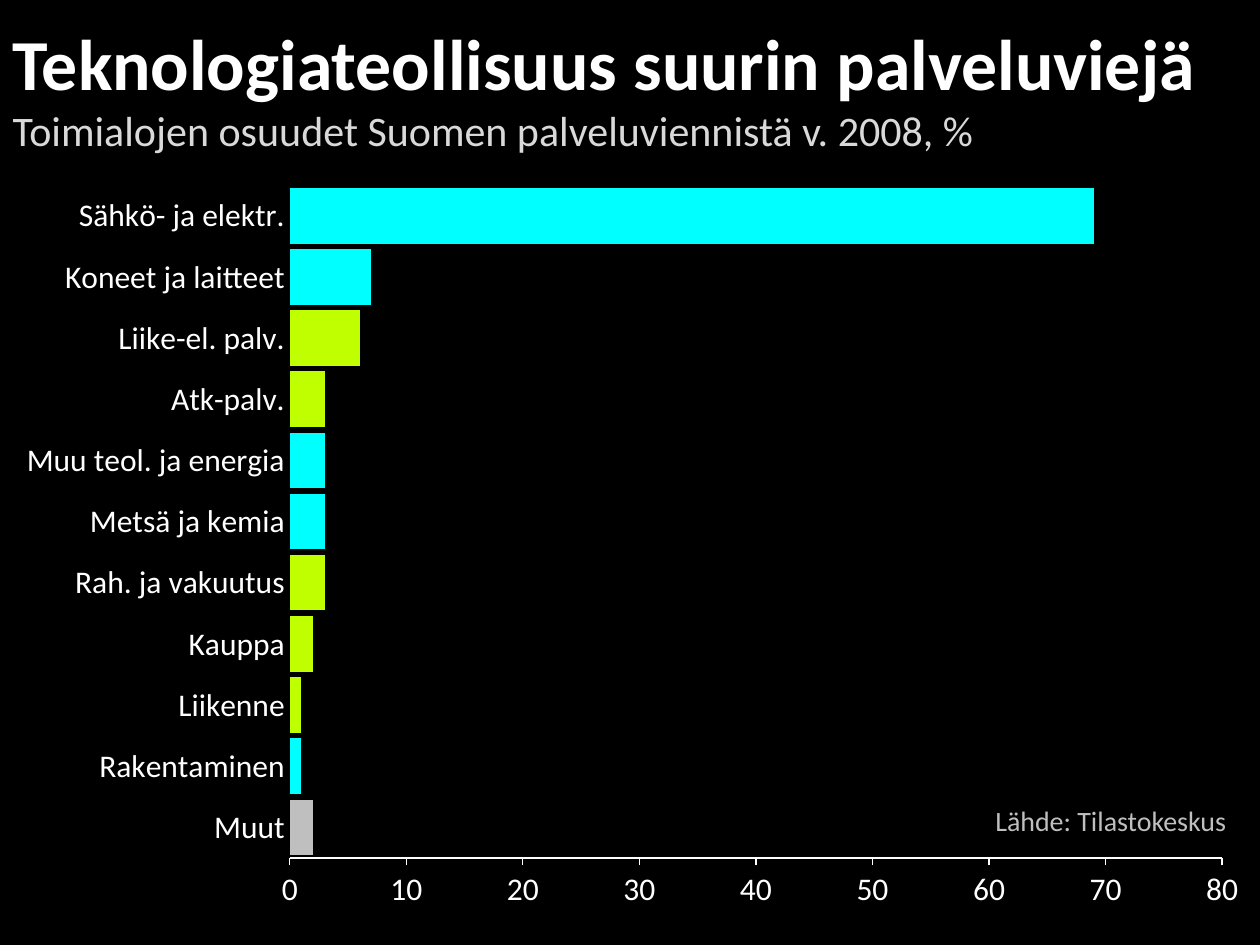
import pptx
import pptx.chart.data
import pptx.dml.color
import pptx.enum.chart
import pptx.enum.text
import pptx.oxml
import pptx.oxml.ns
import pptx.util

COLOURS = {
    "ground": "000000", "text": "FFFFFF", "subtitle": "D9D9D9",
    "industry": "00FFFF", "services": "C0FF00", "other": "BFBFBF",
}
EXPORT_SHARES = [
    ("Muut", 2, "other"),
    ("Rakentaminen", 1, "industry"),
    ("Liikenne", 1, "services"),
    ("Kauppa", 2, "services"),
    ("Rah. ja vakuutus", 3, "services"),
    ("Metsä ja kemia", 3, "industry"),
    ("Muu teol. ja energia", 3, "industry"),
    ("Atk-palv.", 3, "services"),
    ("Liike-el. palv.", 6, "services"),
    ("Koneet ja laitteet", 7, "industry"),
    ("Sähkö- ja elektr.", 69, "industry"),
]
PLOT_AREA = {"x": 0.23, "y": 0.02, "w": 0.74, "h": 0.89}


class SlideBuilder:
    """Holds the style and the current slide; lengths are shares of the slide."""

    font_name = "Calibri"

    def __init__(self, deck):
        self.deck = deck
        self.page = deck.slides.add_slide(deck.slide_layouts[5])
        self.paint(self.page.background.fill, "ground")

    def colour(self, name):
        return pptx.dml.color.RGBColor.from_string(COLOURS[name])

    def paint(self, fill, name):
        fill.solid()
        fill.fore_color.rgb = self.colour(name)

    def area(self, left, top, width, height):
        across, down = self.deck.slide_width, self.deck.slide_height
        return [int(share * size) for share, size in
                zip((left, top, width, height), (across, down, across, down))]

    def style(self, font, size, colour, bold=False):
        font.name = self.font_name
        font.size = pptx.util.Pt(size)
        font.bold = bold
        font.color.rgb = self.colour(colour)

    def fill_text(self, box, lines):
        frame = box.text_frame
        frame.text = "\n".join(text for text, *_ in lines)
        frame.margin_left = frame.margin_right = 0
        frame.margin_top = frame.margin_bottom = 0
        frame.word_wrap = True
        frame.auto_size = pptx.enum.text.MSO_AUTO_SIZE.SHAPE_TO_FIT_TEXT
        frame.vertical_anchor = pptx.enum.text.MSO_ANCHOR.TOP
        for para, (_, size, colour, bold) in zip(frame.paragraphs, lines):
            para.alignment = pptx.enum.text.PP_ALIGN.LEFT
            for span in para.runs:
                self.style(span.font, size, colour, bold)

    def title(self, area, lines):
        box = self.page.shapes.title
        box.left, box.top, box.width, box.height = self.area(*area)
        self.fill_text(box, lines)

    def note(self, area, text, size, colour):
        box = self.page.shapes.add_textbox(*self.area(*area))
        self.fill_text(box, [(text, size, colour, False)])

    def bar_chart(self, area, rows):
        kinds = pptx.enum.chart
        data = pptx.chart.data.CategoryChartData()
        data.categories = [label for label, _, _ in rows]
        data.add_series("Series 1", [value for _, value, _ in rows])
        chart = self.page.shapes.add_chart(
            kinds.XL_CHART_TYPE.BAR_CLUSTERED, *self.area(*area), data).chart
        chart.has_legend = False
        chart.has_title = False
        self.style(chart.font, 18, "text")
        plot = chart.plots[0]
        plot.gap_width = plot.overlap = 10
        plot.vary_by_categories = False
        series = plot.series[0]
        self.paint(series.format.fill, "industry")
        for index, (_, _, group) in enumerate(rows):
            if group != "industry":
                self.paint(series.points[index].format.fill, group)
        scale = chart.value_axis
        scale.minimum_scale, scale.maximum_scale, scale.major_unit = 0, 80, 10
        scale.has_major_gridlines = False
        scale.tick_labels.number_format = "General"
        scale.tick_labels.number_format_is_linked = False
        self.axis(scale, kinds.XL_TICK_MARK.OUTSIDE, "text", 0.75)
        self.axis(chart.category_axis, kinds.XL_TICK_MARK.NONE, "ground", 1)
        self.place_plot(chart)

    def axis(self, axis, tick, colour, width):
        axis.major_tick_mark = tick
        axis.format.line.color.rgb = self.colour(colour)
        axis.format.line.width = pptx.util.Pt(width)
        self.style(axis.tick_labels.font, 18, "text")

    def place_plot(self, chart):
        plot_area = chart.plots[0]._element.getparent()
        for old in plot_area.findall(pptx.oxml.ns.qn("c:layout")):
            plot_area.remove(old)
        modes = '<c:xMode val="edge"/><c:yMode val="edge"/>'
        sizes = "".join(f'<c:{key} val="{share}"/>' for key, share in PLOT_AREA.items())
        plot_area.insert(0, pptx.oxml.parse_xml(
            f'<c:layout {pptx.oxml.ns.nsdecls("c")}><c:manualLayout>'
            f'<c:layoutTarget val="inner"/>{modes}{sizes}'
            '</c:manualLayout></c:layout>'))


def main():
    deck = pptx.Presentation()
    deck.slide_width = pptx.util.Inches(10)
    deck.slide_height = pptx.util.Inches(7.5)
    builder = SlideBuilder(deck)
    builder.bar_chart((0, 0.18, 1, 0.8), EXPORT_SHARES)
    builder.title((0.01, 0.02, 1, 0.15), [
        ("Teknologiateollisuus suurin palveluviejä", 41, "text", True),
        ("Toimialojen osuudet Suomen palveluviennistä v. 2008, %", 24, "subtitle", False),
    ])
    builder.note((0.79, 0.85, 0.2, 0.04), "Lähde: Tilastokeskus", 16, "other")
    deck.save("out.pptx")


if __name__ == "__main__":
    main()
